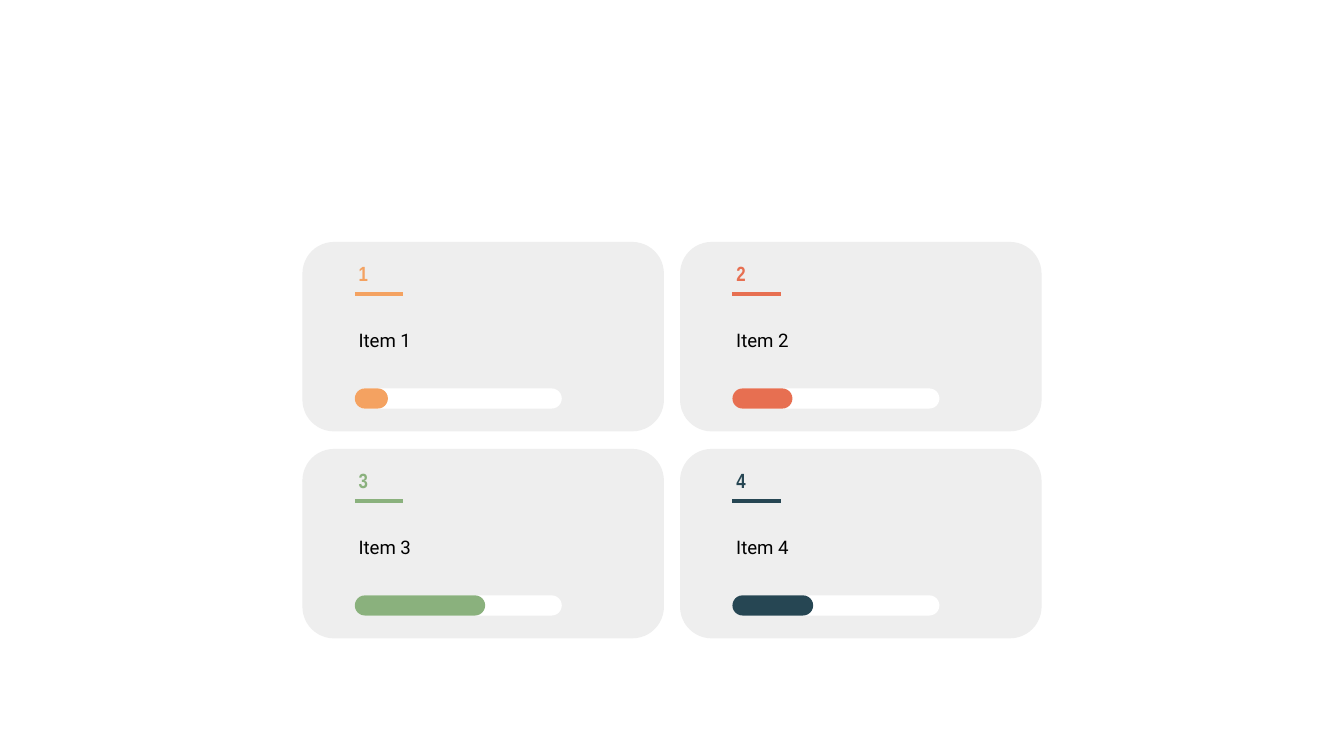
"""Build a slide with a two by two grid of numbered progress cards."""
import lxml.etree
import pptx
import pptx.dml.color
import pptx.enum.shapes
import pptx.enum.text
import pptx.oxml.ns
import pptx.util

CARDS = [
    ("1", "Item 1", "orange", 0.16),
    ("2", "Item 2", "coral", 0.29),
    ("3", "Item 3", "green", 0.63),
    ("4", "Item 4", "navy", 0.39),
]
COLORS = {
    "orange": "F4A261", "coral": "E76F51", "green": "8AB17D", "navy": "264653",
    "card": "EEEEEE", "track": "FFFFFF", "text": "000000",
}
WIDE = 10
HIGH = WIDE * 9 / 16
COLS = 2
LEFT, TOP = 2.25, 1.8
CARD_W, CARD_H = 2.69, 1.41
STEP_X, STEP_Y = 2.81, 1.54
INSET, PAD = 0.39, 0.1
BAR_W, BAR_H = 1.54, 0.15

inch = pptx.util.Inches


def color(name):
    return pptx.dml.color.RGBColor.from_string(COLORS[name])


def pill(group, x, y, w, h, fill, round_by):
    kind = pptx.enum.shapes.MSO_SHAPE.ROUNDED_RECTANGLE
    shape = group.shapes.add_shape(kind, inch(x), inch(y), inch(w), inch(h))
    shape.adjustments[0] = round_by
    shape.shadow.inherit = False
    shape.fill.solid()
    shape.fill.fore_color.rgb = color(fill)
    shape.line.fill.background()


def rule(group, x, y, w, fill):
    kind = pptx.enum.shapes.MSO_CONNECTOR.STRAIGHT
    line = group.shapes.add_connector(kind, inch(x), inch(y), inch(x + w), inch(y))
    line.line.color.rgb = color(fill)
    line.line.width = pptx.util.Pt(2.25)
    props = line._element.spPr
    lxml.etree.SubElement(props, pptx.oxml.ns.qn("a:effectLst"))


def write(group, text, x, y, w, h, font, size, fill="text", bold=False):
    box = group.shapes.add_textbox(inch(x), inch(y), inch(w), inch(h))
    frame = box.text_frame
    frame.word_wrap = True
    frame.vertical_anchor = pptx.enum.text.MSO_ANCHOR.MIDDLE
    frame.margin_left = frame.margin_right = inch(PAD)
    frame.margin_top = frame.margin_bottom = inch(PAD)
    run = frame.paragraphs[0].add_run()
    run.text = text
    run.font.name = font
    run.font.size = pptx.util.Pt(size)
    run.font.bold = bold
    run.font.color.rgb = color(fill)


def card(slide, x, y, number, label, fill, share):
    group = slide.shapes.add_group_shape()
    edge, text_x, bar_y = x + INSET, x + 0.32, y + 1.09
    pill(group, x, y, CARD_W, CARD_H, "card", 0.167)
    pill(group, edge, bar_y, BAR_W, BAR_H, "track", 0.5)
    pill(group, edge, bar_y, BAR_W * share, BAR_H, fill, 0.5)
    write(group, number, text_x, y + 0.15, 0.88, 0.17,
          font="Arial Narrow", size=11, fill=fill, bold=True)
    rule(group, edge, y + INSET, 0.36, fill)
    write(group, label, text_x, y + 0.47, 2, 0.52, font="Roboto", size=10)


def main():
    deck = pptx.Presentation()
    deck.slide_width, deck.slide_height = inch(WIDE), inch(HIGH)
    slide = deck.slides.add_slide(deck.slide_layouts[6])
    for index, item in enumerate(CARDS):
        row, col = divmod(index, COLS)
        card(slide, LEFT + col * STEP_X, TOP + row * STEP_Y, *item)
    deck.save("out.pptx")


if __name__ == "__main__":
    main()
